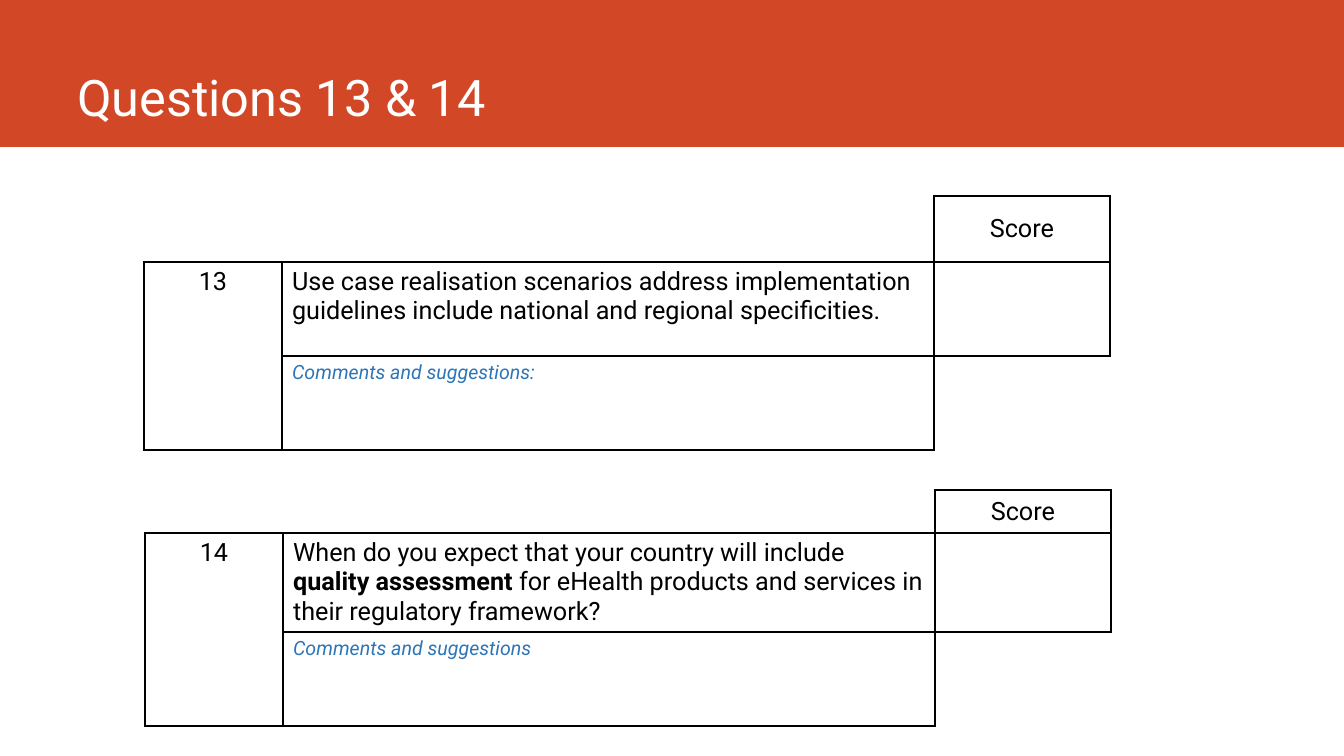
from lxml.etree import SubElement
from pptx import Presentation
from pptx.dml.color import RGBColor
from pptx.enum.shapes import MSO_SHAPE
from pptx.enum.text import MSO_ANCHOR, PP_ALIGN
from pptx.oxml.ns import qn
from pptx.util import Emu, Pt

FONT = "Roboto"
COLORS = {
    "band": "D24726",
    "title": "FFFFFF",
    "text": "000000",
    "comment": "2E75B6",
    "border": "000000",
}
EMU_PER_PX = 914400 / 100.8
COLUMN_WIDTHS = (138, 652, 176)
# Sides with a border, where a cell does not have all four
OPEN_CELLS = {(0, 0): "RB", (0, 1): "RB", (2, 2): "LT"}


def px(length):
    return Emu(round(length * EMU_PER_PX))


def rgb(name):
    return RGBColor.from_string(COLORS[name])


def style_font(font, size, color):
    font.name = FONT
    font.size = Pt(size)
    font.color.rgb = rgb(color)


def set_borders(cell, sides):
    properties = cell._tc.get_or_add_tcPr()
    for position, side in enumerate("LRTB"):
        line = SubElement(properties, qn(f"a:ln{side}"), w=str(Pt(1)))
        if side in sides:
            fill = SubElement(line, qn("a:solidFill"))
            SubElement(fill, qn("a:srgbClr"), val=COLORS["border"])
        else:
            SubElement(line, qn("a:noFill"))
        properties.insert(position, line)  # borders precede the cell fill


def write_cell(cell, runs, size=18, color="text", align=PP_ALIGN.LEFT, italic=None):
    """Write (text, bold) runs into one paragraph."""
    paragraph = cell.text_frame.paragraphs[0]
    paragraph.alignment = align
    style_font(paragraph.font, size, color)
    paragraph.font.italic = italic
    for text, bold in runs:
        run = paragraph.add_run()
        run.text = text
        style_font(run.font, size, color)
        run.font.bold = bold
        run.font.italic = italic


def add_title(slide, text):
    title = slide.shapes.title
    title.left, title.top, title.width, title.height = px(67), px(0), px(1185), px(133)
    title.text_frame.text = text
    title.text_frame.vertical_anchor = MSO_ANCHOR.BOTTOM
    paragraph = title.text_frame.paragraphs[0]
    paragraph.alignment = PP_ALIGN.LEFT
    paragraph.line_spacing = 0.9
    style_font(paragraph.font, 36, "title")

    # Coloured band behind the title
    band = slide.shapes.add_shape(MSO_SHAPE.RECTANGLE, px(0), px(0), px(1344), px(147))
    band.shadow.inherit = False
    band.fill.solid()
    band.fill.fore_color.rgb = rgb("band")
    band.line.fill.background()
    title.element.addprevious(band.element)


def add_question(slide, left, top, row_heights, number, question, comment):
    frame = slide.shapes.add_table(
        len(row_heights), len(COLUMN_WIDTHS), px(left), px(top),
        px(sum(COLUMN_WIDTHS)), px(sum(row_heights)))
    table = frame.table
    table.first_row = table.horz_banding = False
    for column, width in zip(table.columns, COLUMN_WIDTHS):
        column.width = px(width)

    # Cell fills, borders and default text
    for r, height in enumerate(row_heights):
        table.rows[r].height = px(height)
        for c in range(len(COLUMN_WIDTHS)):
            cell = table.cell(r, c)
            cell.fill.background()
            set_borders(cell, OPEN_CELLS.get((r, c), "LRTB"))
            style_font(cell.text_frame.paragraphs[0].font, 18, "text")
    table.cell(0, 0).merge(table.cell(0, 1))
    table.cell(1, 0).merge(table.cell(2, 0))

    # Wording
    score = table.cell(0, 2)
    score.vertical_anchor = MSO_ANCHOR.MIDDLE
    write_cell(score, [("Score", False)], align=PP_ALIGN.CENTER)
    write_cell(table.cell(1, 0), [(number, False)], align=PP_ALIGN.CENTER)
    write_cell(table.cell(1, 1), question)
    write_cell(table.cell(2, 1), [(comment, False)], 14, "comment", italic=True)


def main():
    presentation = Presentation()
    presentation.slide_width, presentation.slide_height = px(1344), px(756)
    slide = presentation.slides.add_slide(presentation.slide_layouts[5])

    add_title(slide, "Questions 13 & 14")
    add_question(
        slide, 144, 196, (66, 94, 94), "13",
        [("Use case realisation scenarios address implementation guidelines "
          "include national and regional specificities.", False)],
        "Comments and suggestions:")
    add_question(
        slide, 145, 490, (43, 99, 94), "14",
        [("When do you expect that your country will include ", False),
         ("quality assessment ", True),
         ("for eHealth products and services in their regulatory framework?", False)],
        "Comments and suggestions")

    presentation.save("out.pptx")


if __name__ == "__main__":
    main()
